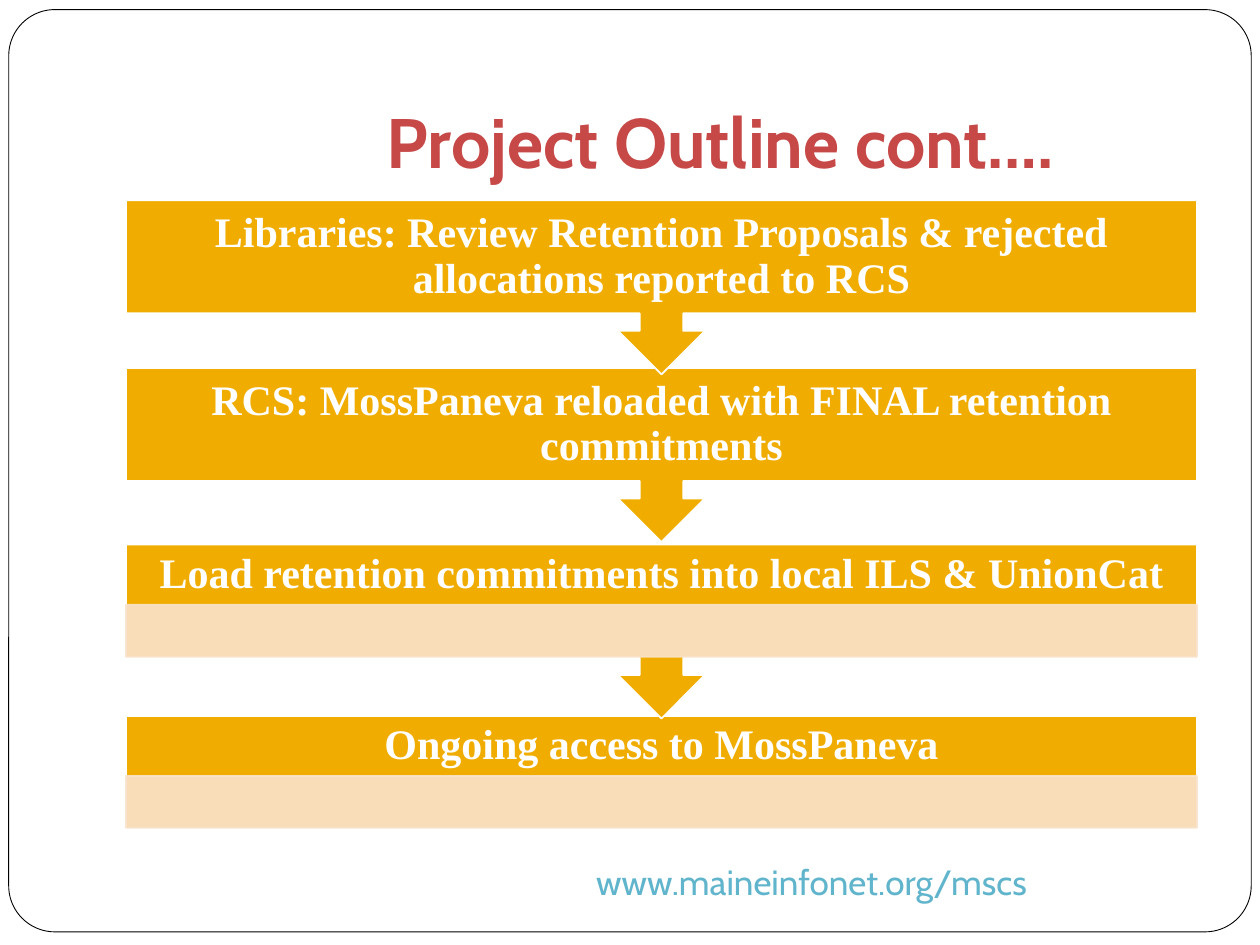
from dataclasses import dataclass

from lxml import etree
from pptx import Presentation
from pptx.dml.color import RGBColor
from pptx.enum import shapes, text
from pptx.oxml import ns
from pptx.util import Pt


@dataclass(frozen=True)
class Theme:
    paper: RGBColor = RGBColor(0xFF, 0xFF, 0xFF)
    border: RGBColor = RGBColor(0, 0, 0)
    heading: RGBColor = RGBColor(0xC6, 0x48, 0x47)
    link: RGBColor = RGBColor(0x60, 0xB5, 0xCC)
    step: RGBColor = RGBColor(0xF0, 0xAD, 0x00)
    detail: RGBColor = RGBColor(0xF9, 0xE3, 0xCC)
    heading_font: str = "Cabin"
    step_font: str = "Times New Roman"
    heading_size: float = 40
    step_size: float = 24
    link_size: float = 20


@dataclass(frozen=True)
class Box:
    left: float
    top: float
    width: float
    height: float

    def lengths(self):
        return [Pt(v) for v in (self.left, self.top, self.width, self.height)]


@dataclass(frozen=True)
class Step:
    label: str
    top: float
    has_detail: bool = False
    leads_on: bool = True


THEME = Theme()
STEP_LEFT, STEP_WIDTH = 72, 612
BODY_HEIGHT, CALLOUT_HEIGHT = 64.6, 99.4
LABEL_HEIGHT, DETAIL_HEIGHT = 34.4, 29.7
STEP_INSET = 13.7
STEPS = [
    Step("Libraries: Review Retention Proposals & rejected "
         "allocations reported to RCS", 114.5),
    Step("RCS: MossPaneva reloaded with FINAL retention commitments", 210.3),
    Step("Load retention commitments into local ILS & UnionCat", 311.2,
         has_detail=True),
    Step("Ongoing access to MossPaneva", 409, has_detail=True, leads_on=False),
]


def add_panel(slide, kind, box: Box, fill: RGBColor, line: RGBColor,
              line_width: float):
    panel = slide.shapes.add_shape(kind, *box.lengths())
    panel.shadow.inherit = False
    panel.fill.solid()
    panel.fill.fore_color.rgb = fill
    panel.line.color.rgb = line
    panel.line.width = Pt(line_width)
    return panel


def write(frame, wording: str, font: str, size: float, color: RGBColor,
          align, bold: bool = False):
    frame.word_wrap = True
    paragraph = frame.paragraphs[0]
    paragraph.alignment = align
    run = paragraph.add_run()
    run.text = wording
    run.font.name = font
    run.font.size = Pt(size)
    run.font.bold = bold
    run.font.color.rgb = color
    return paragraph


def set_opacity(panel, percent: int) -> None:
    """Apply one opacity to both the fill and the outline."""
    for color in panel._element.spPr.iter(ns.qn("a:srgbClr")):
        etree.SubElement(color, ns.qn("a:alpha"), val=str(percent * 1000))


def add_step(slide, step: Step) -> None:
    kinds = shapes.MSO_SHAPE
    kind = kinds.DOWN_ARROW_CALLOUT if step.leads_on else kinds.RECTANGLE
    height = CALLOUT_HEIGHT if step.leads_on else BODY_HEIGHT
    body = add_panel(slide, kind, Box(STEP_LEFT, step.top, STEP_WIDTH, height),
                     THEME.step, THEME.paper, 1)
    frame = body.text_frame
    frame.vertical_anchor = text.MSO_ANCHOR.MIDDLE
    frame.margin_left = frame.margin_right = Pt(STEP_INSET)
    below = BODY_HEIGHT - LABEL_HEIGHT if step.has_detail else 0
    # Labels fill most of their band, so only the strip below is reserved.
    frame.margin_top = Pt(0)
    frame.margin_bottom = Pt(below)
    paragraph = write(frame, step.label, THEME.step_font, THEME.step_size,
                      THEME.paper, text.PP_ALIGN.CENTER, bold=True)
    paragraph.line_spacing = 0.9
    if step.has_detail:
        strip = Box(STEP_LEFT, step.top + LABEL_HEIGHT, STEP_WIDTH, DETAIL_HEIGHT)
        detail = add_panel(slide, kinds.RECTANGLE, strip,
                           THEME.detail, THEME.detail, 1)
        set_opacity(detail, 90)


def add_heading(slide) -> None:
    heading = slide.shapes.add_textbox(*Box(72, 21.6, 612, 90).lengths())
    frame = heading.text_frame
    frame.vertical_anchor = text.MSO_ANCHOR.BOTTOM
    frame.margin_left = Pt(149)
    frame.margin_bottom = Pt(7.2)
    write(frame, "Project Outline cont.…", THEME.heading_font,
          THEME.heading_size, THEME.heading, text.PP_ALIGN.LEFT, bold=True)


def add_link(slide) -> None:
    link = slide.shapes.add_textbox(*Box(72, 486, 522, 36).lengths())
    link.text_frame.vertical_anchor = text.MSO_ANCHOR.MIDDLE
    write(link.text_frame, "www.maineinfonet.org/mscs", THEME.heading_font,
          THEME.link_size, THEME.link, text.PP_ALIGN.RIGHT)


def main() -> None:
    deck = Presentation()
    deck.slide_width, deck.slide_height = Pt(720), Pt(540)
    slide = deck.slides.add_slide(deck.slide_layouts[6])
    border = add_panel(slide, shapes.MSO_SHAPE.ROUNDED_RECTANGLE,
                       Box(5, 5.5, 710, 527), THEME.paper, THEME.border, 0.5)
    border.adjustments[0] = 0.05
    add_heading(slide)
    add_link(slide)
    for step in reversed(STEPS):
        add_step(slide, step)
    deck.save("out.pptx")


if __name__ == "__main__":
    main()
